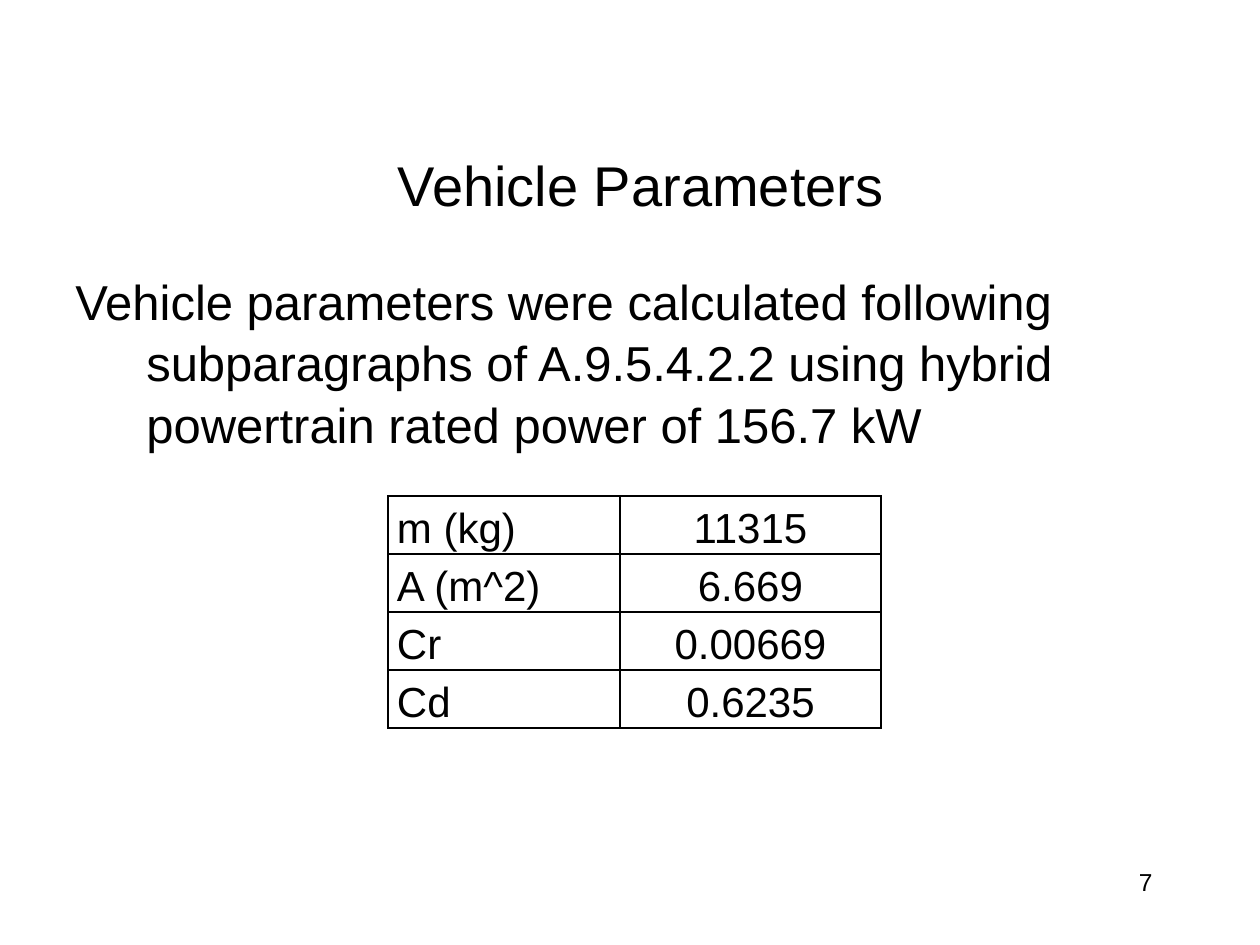
from lxml import etree
from pptx import Presentation
from pptx.dml.color import RGBColor
from pptx.enum.text import MSO_ANCHOR, PP_ALIGN
from pptx.oxml.ns import qn
from pptx.util import Emu, Pt

BLACK = RGBColor(0, 0, 0)
WHITE = RGBColor(255, 255, 255)
LEFT, CENTER, RIGHT = PP_ALIGN.LEFT, PP_ALIGN.CENTER, PP_ALIGN.RIGHT
TOP, MIDDLE = MSO_ANCHOR.TOP, MSO_ANCHOR.MIDDLE
PX_PER_INCH = 126


def px(n):
    return Emu(round(n * 914400 / PX_PER_INCH))


class SlideBuilder:
    font = "Arial"
    color = BLACK

    def __init__(self, slide):
        self.slide = slide

    def style(self, p, size, align, spacing=1.0):
        p.alignment = align
        p.line_spacing = spacing
        for r in p.runs:
            r.font.name = self.font
            r.font.size = Pt(size)
            r.font.color.rgb = self.color

    def text(self, text, box, size, align=LEFT, anchor=TOP, spacing=1.0, hanging=0):
        sp = self.slide.shapes.add_textbox(*map(px, box))
        tf = sp.text_frame
        tf.word_wrap = True
        tf.vertical_anchor = anchor
        tf.text = text
        p = tf.paragraphs[0]
        if hanging:
            pPr = p._p.get_or_add_pPr()
            pPr.set("marL", str(px(hanging)))
            pPr.set("indent", str(-px(hanging)))
        self.style(p, size, align, spacing)

    def borders(self, cell, width=1):
        tcPr = cell._tc.get_or_add_tcPr()
        for i, side in enumerate(("lnL", "lnR", "lnT", "lnB")):
            ln = etree.Element(qn("a:" + side), w=str(Pt(width)))
            fill = etree.SubElement(ln, qn("a:solidFill"))
            etree.SubElement(fill, qn("a:srgbClr"), val=str(self.color))
            tcPr.insert(i, ln)

    def table(self, rows, left, top, col_widths, row_height, size, aligns):
        frame = self.slide.shapes.add_table(
            len(rows), len(col_widths), px(left), px(top),
            px(sum(col_widths)), px(row_height * len(rows)))
        table = frame.table
        table.first_row = table.horz_banding = False
        for col, width in zip(table.columns, col_widths):
            col.width = px(width)
        for row, values in zip(table.rows, rows):
            row.height = px(row_height)
            for cell, value, align in zip(row.cells, values, aligns):
                cell.text = value
                cell.vertical_anchor = MIDDLE
                cell.margin_left = cell.margin_right = px(9)
                cell.margin_top = cell.margin_bottom = 0
                cell.fill.solid()
                cell.fill.fore_color.rgb = WHITE
                self.borders(cell)
                self.style(cell.text_frame.paragraphs[0], size, align, 1.15)


def main():
    prs = Presentation()
    prs.slide_width, prs.slide_height = px(1260), px(945)
    s = SlideBuilder(prs.slides.add_slide(prs.slide_layouts[6]))

    # Slide number
    s.text("7", (903, 861, 262, 63), 14, RIGHT)

    # Title
    s.text("Vehicle Parameters", (116, 116, 1050, 136), 32, CENTER, MIDDLE)

    # Parameter table
    parameters = [
        ("m (kg)", "11315"),
        ("A (m^2)", "6.669"),
        ("Cr", "0.00669"),
        ("Cd", "0.6235"),
    ]
    s.table(parameters, 388, 496, (232, 261), 54, 24, (LEFT, CENTER))

    # Explanation
    s.text("Vehicle parameters were calculated following subparagraphs of "
           "A.9.5.4.2.2 using hybrid powertrain rated power of 156.7 kW",
           (63, 262, 1134, 284), 28, spacing=1.05, hanging=71)

    prs.save("out.pptx")


if __name__ == "__main__":
    main()
